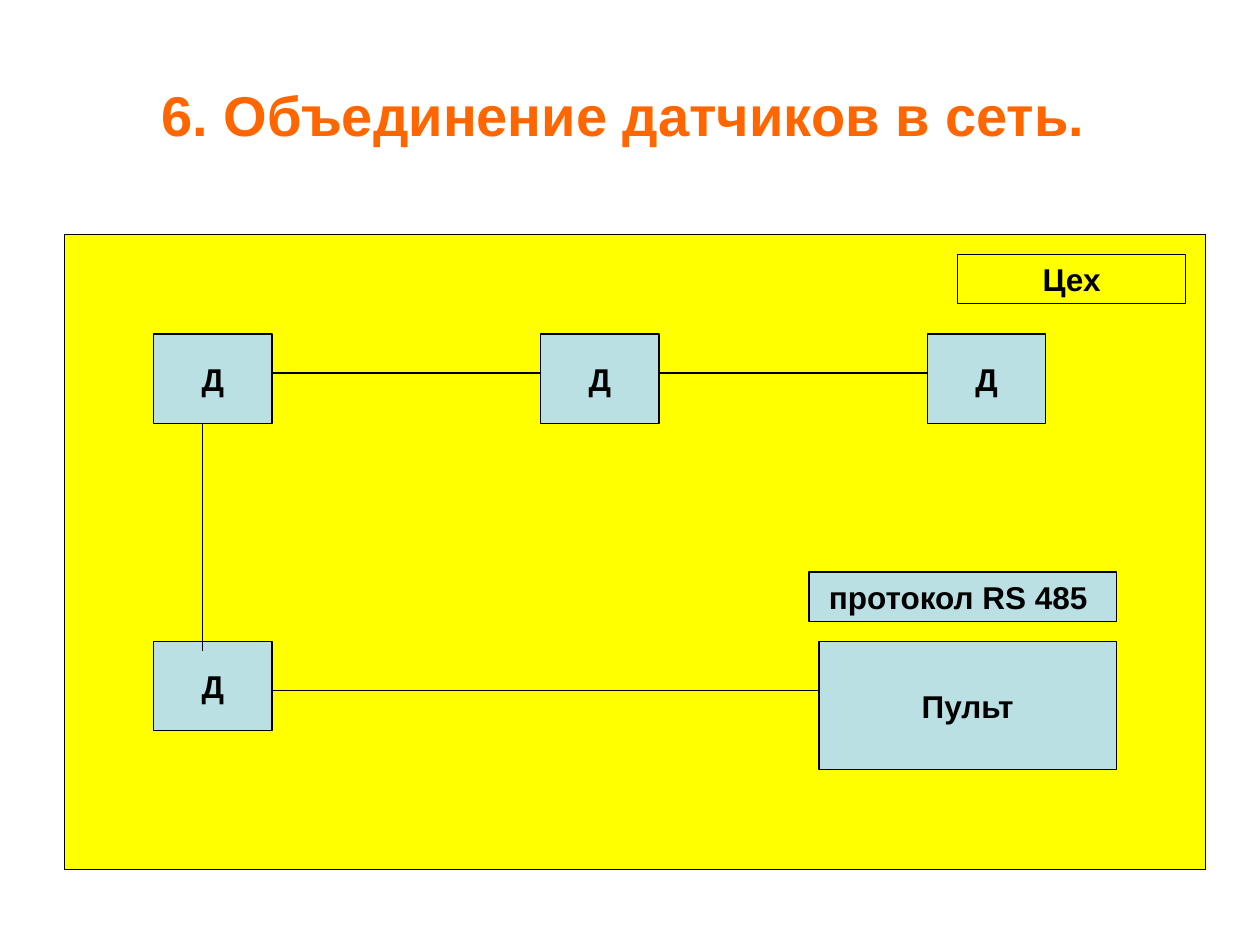
from dataclasses import dataclass
from typing import Optional

from lxml import etree
from pptx import Presentation
from pptx.dml.color import RGBColor
from pptx.enum.shapes import MSO_CONNECTOR, MSO_SHAPE
from pptx.enum.text import MSO_ANCHOR, PP_ALIGN
from pptx.oxml import parse_xml
from pptx.oxml.ns import nsdecls, qn
from pptx.util import Inches, Pt

RECTANGLE = MSO_SHAPE.RECTANGLE
STRAIGHT = MSO_CONNECTOR.STRAIGHT
MIDDLE = MSO_ANCHOR.MIDDLE
CENTER = PP_ALIGN.CENTER

BLACK = RGBColor(0x00, 0x00, 0x00)
ORANGE = RGBColor(0xFF, 0x66, 0x00)
YELLOW = RGBColor(0xFF, 0xFF, 0x00)
PALE_BLUE = RGBColor(0xBB, 0xE0, 0xE3)

LINE_WIDTH = Pt(0.75)
SENSOR_WIDTH, SENSOR_HEIGHT = 0.94, 0.71
SENSOR_LEFT, SENSOR_STEP = 1.22, 3.07
TOP_ROW, BOTTOM_ROW = 2.65, 5.09
CONSOLE_LEFT = 6.5
TOP_WIRE, BOTTOM_WIRE, SIDE_WIRE = 2.96, 5.48, 1.61


@dataclass
class Block:
    left: float
    top: float
    width: float
    height: float
    text: str = ""
    fill: Optional[RGBColor] = PALE_BLUE


@dataclass
class Wire:
    start: tuple[float, float]
    end: tuple[float, float]


def write_text(frame, text: str, *, size: float = 18, color: RGBColor = BLACK,
               wrap: bool = False):
    frame.word_wrap = wrap
    frame.vertical_anchor = MIDDLE
    para = frame.paragraphs[0]
    para.alignment = CENTER
    span = para.add_run()
    span.text = text
    span.font.size = Pt(size)
    span.font.bold = True
    span.font.name = "Arial"
    span.font.color.rgb = color
    return span


def add_text_shadow(span) -> None:
    shadow = parse_xml(
        f'<a:effectLst {nsdecls("a")}>'
        '<a:outerShdw dist="35921" dir="2700000" algn="ctr" rotWithShape="0">'
        f'<a:srgbClr val="{BLACK}"/></a:outerShdw></a:effectLst>')
    span.font._element.find(qn("a:solidFill")).addnext(shadow)


def draw_block(page, block: Block) -> None:
    box = page.shapes.add_shape(RECTANGLE, Inches(block.left), Inches(block.top),
                                Inches(block.width), Inches(block.height))
    box.shadow.inherit = False
    box.line.color.rgb = BLACK
    box.line.width = LINE_WIDTH
    if block.fill is None:
        box.fill.background()
    else:
        box.fill.solid()
        box.fill.fore_color.rgb = block.fill
    if block.text:
        write_text(box.text_frame, block.text)


def draw_wire(page, wire: Wire) -> None:
    points = [Inches(value) for value in (*wire.start, *wire.end)]
    line = page.shapes.add_connector(STRAIGHT, *points)
    line.line.color.rgb = BLACK
    line.line.width = LINE_WIDTH
    etree.SubElement(line._element.spPr, qn("a:effectLst"))


def sensor(column: int, top: float) -> Block:
    return Block(SENSOR_LEFT + column * SENSOR_STEP, top,
                 SENSOR_WIDTH, SENSOR_HEIGHT, "Д")


def main() -> None:
    deck = Presentation()
    deck.slide_width, deck.slide_height = Inches(10), Inches(7.5)
    page = deck.slides.add_slide(deck.slide_layouts[5])

    title = page.shapes.title
    title.left, title.top = Inches(0.51), Inches(0.28)
    title.width, title.height = Inches(9), Inches(1.25)
    add_text_shadow(write_text(title.text_frame, "6. Объединение датчиков в сеть. ",
                               size=32, color=ORANGE, wrap=True))

    top_sensors = [sensor(column, TOP_ROW) for column in range(3)]
    bottom_sensor = sensor(0, BOTTOM_ROW)
    blocks = [
        Block(0.51, 1.86, 9.06, 5.04, fill=YELLOW),
        *top_sensors,
        bottom_sensor,
        Block(CONSOLE_LEFT, BOTTOM_ROW, 2.36, 1.02, "Пульт"),
        Block(6.42, 4.54, 2.44, 0.39, "протокол RS 485 "),
        Block(7.6, 2.02, 1.81, 0.39, "Цех", fill=None),
    ]
    wires = [Wire((near.left + SENSOR_WIDTH, TOP_WIRE), (far.left, TOP_WIRE))
             for near, far in zip(top_sensors, top_sensors[1:])]
    wires += [
        Wire((SIDE_WIRE, TOP_ROW + SENSOR_HEIGHT), (SIDE_WIRE, 5.17)),
        Wire((bottom_sensor.left + SENSOR_WIDTH, BOTTOM_WIRE),
             (CONSOLE_LEFT, BOTTOM_WIRE)),
    ]
    for block in blocks:
        draw_block(page, block)
    for wire in wires:
        draw_wire(page, wire)

    deck.save("out.pptx")


if __name__ == "__main__":
    main()
